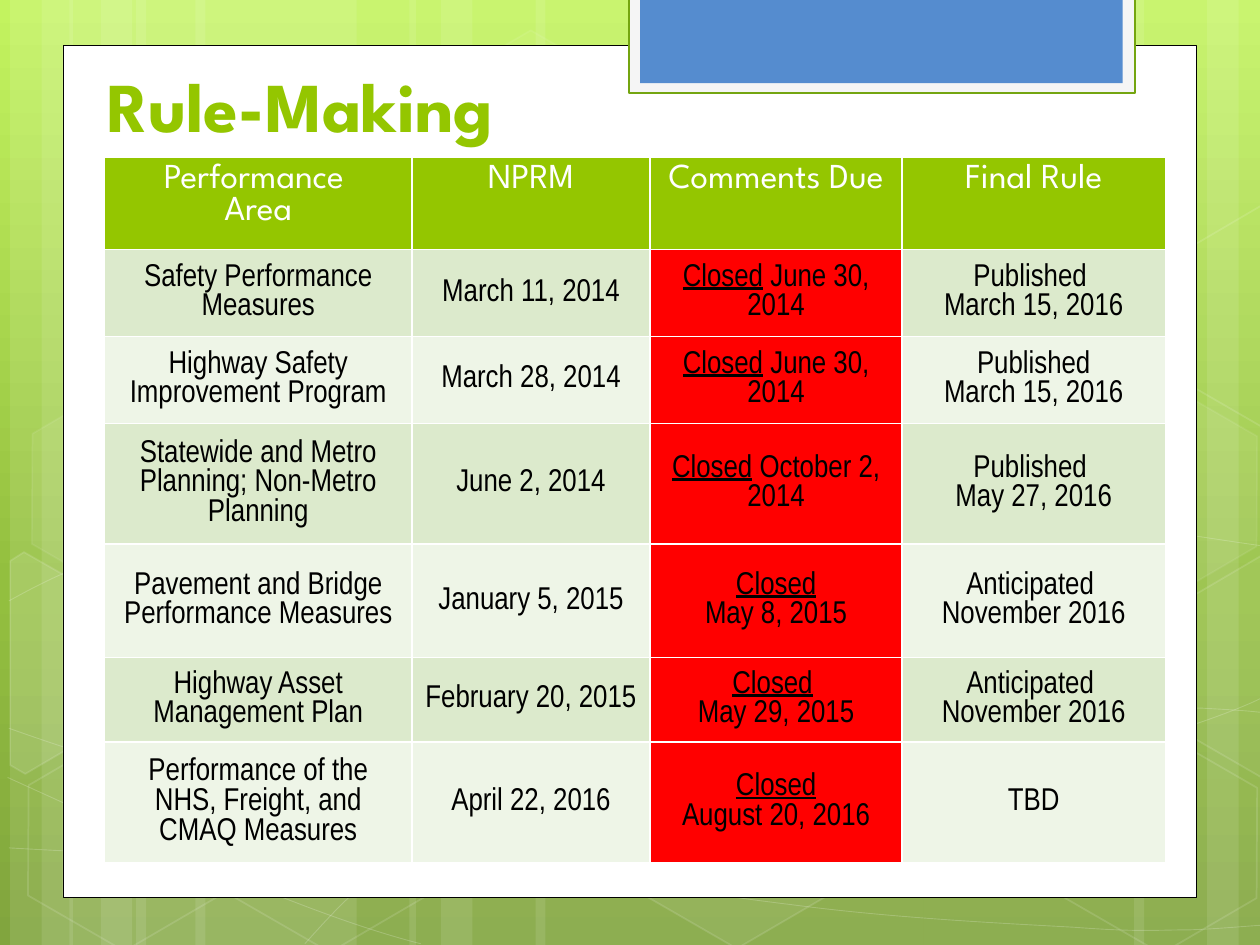
from math import cos, radians, sin

from lxml.etree import SubElement
from pptx import Presentation
from pptx.dml.color import RGBColor
from pptx.enum.shapes import MSO_SHAPE
from pptx.enum.text import MSO_ANCHOR, PP_ALIGN
from pptx.oxml import parse_xml
from pptx.oxml.ns import nsdecls, qn
from pptx.util import Inches, Pt

COLORS = {
    "white": "FFFFFF", "black": "000000", "green": "94C600", "dark_green": "74A510",
    "blue": "558CCF", "tab": "F5F5F5", "closed": "FF0000",
    "odd_row": "DCEACC", "even_row": "EEF5E7",
}
SKY = [(0, "C3F35F"), (62, "93BF3F"), (100, "81A53E")]
HEADING_FONT, BODY_FONT = "League Spartan", "Arial Narrow"
TILT = 30

# Vertical light streaks: left, width, rotation
STREAKS = [
    (1.08, 1.75, 0), (0.08, 0.5, 0), (0.33, 0.83, 0), (1.55, 1.75, 0), (0.55, 0.5, 0),
    (0.8, 0.83, 0), (7.33, 1.75, 180), (9.58, 0.5, 180), (9, 0.83, 180),
    (4.25, 3.08, 0), (3.25, 0.5, 0), (3.5, 0.83, 0),
]
# Thin waves: start point, then curves (two controls and an end) or straight ends
WAVES = [
    [(0.07, 6.73), (0.61, 6.76, 1.15, 6.79, 1.9, 6.78), (2.65, 6.77, 3.58, 6.75, 4.58, 6.65),
     (5.58, 6.55, 7, 6.36, 7.92, 6.17), (8.83, 5.98, 9.77, 5.68, 10.07, 5.51)],
    [(0.07, 4.77), (0.36, 4.61, 0.65, 4.46, 1.21, 4.31), (1.78, 4.16, 2.59, 3.94, 3.47, 3.87),
     (4.36, 3.8, 5.44, 3.79, 6.54, 3.87), (7.64, 3.95, 9.47, 4.26, 10.07, 4.34)],
    [(0.06, 6.17), (1.27, 6.72, 2.47, 7.27, 3.34, 7.49)],
    [(0.07, 5.78), (0.38, 5.89, 0.7, 6, 1.28, 6.16), (1.86, 6.31, 2.73, 6.56, 3.57, 6.73),
     (4.4, 6.9, 5.45, 7.08, 6.28, 7.18), (7.11, 7.29, 8, 7.33, 8.53, 7.36),
     (9.05, 7.4, 9.19, 7.38, 9.45, 7.38), (9.71, 7.37, 9.89, 7.35, 10.07, 7.34)],
    [(2.42, 7.49), (2.6, 7.29, 2.78, 7.09, 3.02, 6.91), (3.26, 6.73, 3.6, 6.53, 3.88, 6.39),
     (4.16, 6.25, 4.33, 6.19, 4.7, 6.09), (5.06, 5.99, 5.73, 5.85, 6.08, 5.78),
     (6.44, 5.71, 6.49, 5.71, 6.8, 5.69), (7.11, 5.66, 7.6, 5.63, 7.94, 5.62),
     (8.29, 5.61, 8.86, 5.62, 8.86, 5.62), (9.53, 5.62),
     (9.71, 5.63, 9.88, 5.64, 9.97, 5.65), (10.06, 5.66, 10.03, 5.65, 10.06, 5.66)],
]
# Hexagons: left, top, fill opacity (None for no fill), outline opacity
HEXAGONS = [
    (3.34, 0.36, 4, 8), (4.97, 5.89, 6, 12), (0.11, 5.91, None, 12), (0.14, 3.12, 7, 8),
    (1.74, 5.92, None, 12), (7.53, 4.53, 10, 12), (8.34, 5.93, None, 12), (8.34, 3.14, 7, 8),
]
# Hexagons cut by the slide edge: corners, centre of rotation, fill opacity
CUT_HEXAGONS = [
    ([(0.08, 4.45), (0.19, 4.38), (0.96, 4.82), (0.95, 5.7), (0.2, 6.14), (0.08, 6.07)],
     (0.36, 5.35), 10),
    ([(9.26, 4.85), (10.01, 4.41), (10.09, 4.46), (10.09, 6.13), (10.02, 6.17), (9.26, 5.73)],
     (9.85, 5.2), 4),
    ([(9.26, 2.07), (10.01, 1.63), (10.1, 1.68), (10.09, 3.35), (10.02, 3.39), (9.26, 2.95)],
     (9.85, 2.41), None),
]

# Table text: "\n" starts a paragraph, "\v" breaks a line, "|" starts a run
COLUMN_WIDTHS = [2.44, 1.89, 2, 2.09]
ROW_HEIGHTS = [0.73, 0.69, 0.69, 0.96, 0.9, 0.67, 0.96]
CLOSED_COLUMN = 2
RULES = [
    ("Performance \nArea", "NPRM", "Comments Due", "Final Rule"),
    ("Safety Performance Measures", "March 11, 2014", "Closed| June 30, 2014",
     "Published \nMarch 15, 2016"),
    ("Highway Safety Improvement Program", "March 28, 2014", "Closed| June 30, 2014",
     "Published\nMarch 15, 2016"),
    ("Statewide and Metro Planning; Non-Metro Planning", "June 2, 2014",
     "Closed| October 2, 2014", "Published \nMay 27, 2016"),
    ("Pavement and Bridge Performance Measures", "January 5, 2015", "Closed\nMay 8, 2015",
     "Anticipated \vNovember 2016"),
    ("Highway Asset Management Plan", "February 20, 2015", "Closed| \nMay 29, 2015",
     "Anticipated \vNovember 2016"),
    ("Performance of the NHS, Freight, and CMAQ Measures", "April 22, 2016",
     "Closed\vAugust 20, 2016", "TBD"),
]


def paint(fill, color, opacity=100):
    """Apply a solid colour, or no fill when the colour or opacity is None."""
    if color is None or opacity is None:
        fill.background()
        return
    fill.solid()
    fill.fore_color.rgb = RGBColor.from_string(COLORS[color])
    if opacity < 100:
        for tag in fill._xPr.iter(qn("a:srgbClr")):
            SubElement(tag, qn("a:alpha"), val=str(opacity * 1000))


def style(shape, fill, line=None, width=1, fill_opacity=100, line_opacity=100):
    shape.shadow.inherit = False
    paint(shape.fill, fill, fill_opacity)
    paint(shape.line.fill, line, line_opacity)
    if line:
        shape.line.width = Pt(width)


def add_box(slide, left, top, width, height, kind=MSO_SHAPE.RECTANGLE):
    return slide.shapes.add_shape(
        kind, Inches(left), Inches(top), Inches(width), Inches(height))


def add_outline(slide, points, close):
    corners = [(Inches(x), Inches(y)) for x, y in points]
    builder = slide.shapes.build_freeform(*corners[0])
    builder.add_line_segments(corners[1:], close=close)
    return builder.convert_to_shape()


def add_wave(slide, wave):
    """Draw the end points, then turn the segments with controls into curves."""
    shape = add_outline(slide, [segment[-2:] for segment in wave], False)
    for line, segment in zip(shape.element.xpath(".//a:lnTo"), wave[1:]):
        if len(segment) == 2:
            continue
        line.tag = qn("a:cubicBezTo")
        for i, (x, y) in enumerate((segment[:2], segment[2:4])):
            control = line.makeelement(qn("a:pt"), {
                "x": str(Inches(x) - shape.left), "y": str(Inches(y) - shape.top)})
            line.insert(i, control)
    return shape


def turn_back(points, center):
    c, s = cos(radians(TILT)), sin(radians(TILT))
    cx, cy = center
    return [(cx + (x - cx) * c + (y - cy) * s, cy - (x - cx) * s + (y - cy) * c)
            for x, y in points]


def add_backdrop(slide):
    # Vertical gradient
    sky = slide.background.fill
    sky.gradient()
    sky.gradient_angle = 270
    stops = slide.element.xpath(".//p:bg//a:gsLst")[0]
    for stop in list(stops):
        stops.remove(stop)
    for position, color in SKY:
        stop = SubElement(stops, qn("a:gs"), pos=str(position * 1000))
        SubElement(stop, qn("a:srgbClr"), val=color)

    # Streaks, waves and hexagons
    for left, width, rotation in STREAKS:
        streak = add_box(slide, left, 0, width, 7.5)
        streak.rotation = rotation
        style(streak, "white", fill_opacity=10)
    for wave in WAVES:
        style(add_wave(slide, wave), None, "white", 0.5, line_opacity=20)
    for left, top, fill_opacity, line_opacity in HEXAGONS:
        hexagon = add_box(slide, left, top, 1.75, 1.52, MSO_SHAPE.HEXAGON)
        hexagon.adjustments[0] = 0.285
        hexagon.rotation = TILT
        style(hexagon, "white", "white", 1, fill_opacity, line_opacity)
    for corners, center, fill_opacity in CUT_HEXAGONS:
        hexagon = add_outline(slide, turn_back(corners, center), True)
        hexagon.rotation = TILT
        style(hexagon, "white", "white", 1, fill_opacity, 12)

    # White page and the blue tab hanging over it
    style(add_box(slide, 0.5, 0.36, 9, 6.76), "white", "black", 0.5)
    style(add_box(slide, 4.99, -0.02, 4.02, 0.76), "tab", "dark_green", 1.25)
    style(add_box(slide, 5.08, -0.02, 3.83, 0.68), "blue")


def format_run(run, font, size, color, bold=False):
    run.font.name = font
    run.font.size = Pt(size)
    run.font.bold = bold
    run.font.color.rgb = RGBColor.from_string(COLORS[color])


def add_title(slide, text):
    title = slide.shapes.title
    title.left, title.top, title.width, title.height = map(Inches, (0.75, 0.5, 5.11, 0.71))
    slide.shapes._spTree.append(title.element)  # bring in front of the page
    frame = title.text_frame
    frame.text = text
    frame.word_wrap = True
    frame.vertical_anchor = MSO_ANCHOR.BOTTOM
    frame.paragraphs[0].alignment = PP_ALIGN.LEFT
    format_run(frame.paragraphs[0].runs[0], HEADING_FONT, 40, "green", bold=True)


def set_borders(cell):
    properties = cell._tc.get_or_add_tcPr()
    for index, side in enumerate("LRTB"):
        properties.insert(index, parse_xml(
            f'<a:ln{side} {nsdecls("a")} w="{Pt(1)}"><a:solidFill>'
            f'<a:srgbClr val="{COLORS["white"]}"/></a:solidFill></a:ln{side}>'))


def fill_cell(cell, text, fill, font, size, color):
    paint(cell.fill, fill)
    set_borders(cell)
    cell.text_frame.text = text
    for paragraph in cell.text_frame.paragraphs:
        paragraph.alignment = PP_ALIGN.CENTER
        first, *others = paragraph.text.split("|")
        paragraph.text = first
        for other in others:
            paragraph.add_run().text = other
        for run in paragraph.runs:
            format_run(run, font, size, color)
            if run.text == "Closed":
                run.font.underline = True


def add_rules_table(slide):
    table = slide.shapes.add_table(
        len(RULES), len(COLUMN_WIDTHS), Inches(0.83), Inches(1.25),
        Inches(sum(COLUMN_WIDTHS)), Inches(sum(ROW_HEIGHTS))).table
    for column, width in zip(table.columns, COLUMN_WIDTHS):
        column.width = Inches(width)
    for r, (texts, height) in enumerate(zip(RULES, ROW_HEIGHTS)):
        table.rows[r].height = Inches(height)
        for c, text in enumerate(texts):
            cell = table.cell(r, c)
            if r == 0:
                fill_cell(cell, text, "green", HEADING_FONT, 20, "white")
            else:
                band = "odd_row" if r % 2 else "even_row"
                fill = "closed" if c == CLOSED_COLUMN else band
                fill_cell(cell, text, fill, BODY_FONT, 18, "black")
                cell.vertical_anchor = MSO_ANCHOR.MIDDLE


def main():
    deck = Presentation()
    deck.slide_width, deck.slide_height = Inches(10), Inches(7.5)
    slide = deck.slides.add_slide(deck.slide_layouts[5])
    add_backdrop(slide)
    add_title(slide, "Rule-Making")
    add_rules_table(slide)
    deck.save("out.pptx")


if __name__ == "__main__":
    main()
